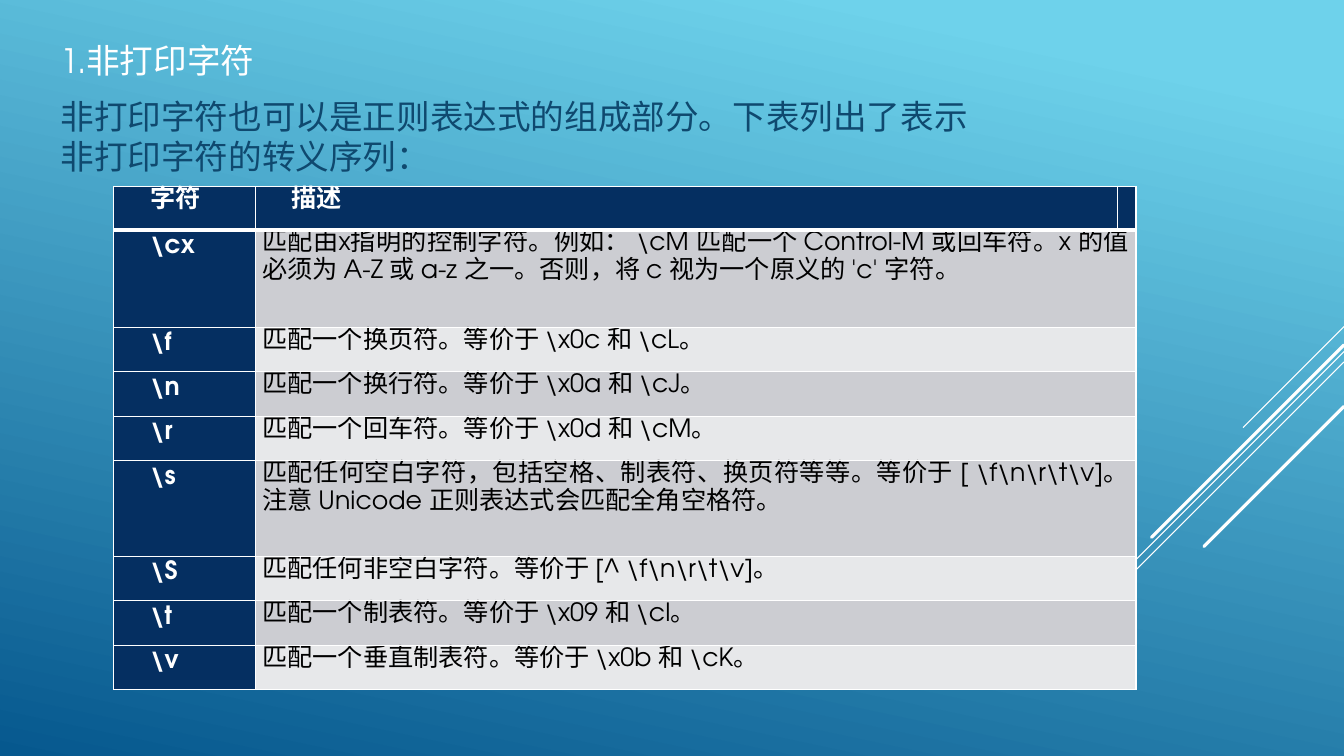
from lxml import etree
from pptx import Presentation
from pptx.dml.color import RGBColor
from pptx.enum.lang import MSO_LANGUAGE_ID
from pptx.enum.shapes import MSO_CONNECTOR
from pptx.enum.text import MSO_ANCHOR, MSO_AUTO_SIZE, PP_ALIGN
from pptx.oxml.ns import qn
from pptx.util import Cm, Pt

STRAIGHT = MSO_CONNECTOR.STRAIGHT
CHINESE = MSO_LANGUAGE_ID.SIMPLIFIED_CHINESE
TOP = MSO_ANCHOR.TOP
NO_AUTOFIT = MSO_AUTO_SIZE.NONE
LEFT, JUSTIFY = PP_ALIGN.LEFT, PP_ALIGN.JUSTIFY

FONT = "TeX Gyre Adventor"
COLORS = {
    "sky": "6ED2EB",
    "deep": "06588E",
    "white": "FFFFFF",
    "black": "000000",
    "intro": "0F496F",
    "navy": "052F61",
    "dark_band": "CCCDD2",
    "light_band": "E7E8EA",
}
SLIDE_WIDTH, SLIDE_HEIGHT = 33.87, 19.05
HEADING = "1.非打印字符"
INTRO = "非打印字符也可以是正则表达式的组成部分。下表列出了表示非打印字符的转义序列："
STRIPES = [
    (8.23, 2.54, 0.75),
    (8.86, 8.28, 0.75),
    (9.12, 5.27, 0.75),
    (8.69, 4.85, 2.25),
    (10.24, 3.53, 2.25),
]
COLUMN_WIDTHS = [3.56, 21.74, 0.46]
HEADER_HEIGHT = 1.09
ESCAPES = [
    (r"\cx", r"匹配由x指明的控制字符。例如： \cM 匹配一个 Control-M 或回车符。x 的值必须为 A-Z 或 a-z 之一。否则，将 c 视为一个原义的 'c' 字符。", 2.46),
    (r"\f", r"匹配一个换页符。等价于 \x0c 和 \cL。", 1.12),
    (r"\n", r"匹配一个换行符。等价于 \x0a 和 \cJ。", 1.12),
    (r"\r", r"匹配一个回车符。等价于 \x0d 和 \cM。", 1.12),
    (r"\s", r"匹配任何空白字符，包括空格、制表符、换页符等等。等价于 [ \f\n\r\t\v]。注意 Unicode 正则表达式会匹配全角空格符。", 2.41),
    (r"\S", r"匹配任何非空白字符。等价于 [^ \f\n\r\t\v]。", 1.12),
    (r"\t", r"匹配一个制表符。等价于 \x09 和 \cI。", 1.12),
    (r"\v", r"匹配一个垂直制表符。等价于 \x0b 和 \cK。", 1.12),
]


def rgb(name):
    return RGBColor.from_string(COLORS[name])


def write(paragraph, text, *, size, color, bold=False, align=LEFT, indent=0,
          line=None, before=0, after=0):
    paragraph.alignment = align
    if line:
        paragraph.line_spacing = Pt(line)
    paragraph.space_before = Pt(before)
    paragraph.space_after = Pt(after)
    properties = paragraph._p.get_or_add_pPr()
    properties.set("marL", "0")
    properties.set("indent", str(Cm(indent)))
    etree.SubElement(properties, qn("a:buNone"))
    run = paragraph.add_run()
    run.text = text
    run.font.name = FONT
    run.font.size = Pt(size)
    run.font.bold = bold
    run.font.color.rgb = rgb(color)
    run.font.language_id = CHINESE


class SlideBuilder:
    def __init__(self, presentation):
        self.slide = presentation.slides.add_slide(presentation.slide_layouts[1])
        title = self.slide.shapes.title
        title.element.getparent().remove(title.element)

    def background(self, start, end, angle):
        fill = self.slide.background.fill
        fill.gradient()
        fill.gradient_angle = 360 - angle
        for stop, position, color in zip(fill.gradient_stops, (0.1, 1), (start, end)):
            stop.position = position
            stop.color.rgb = rgb(color)

    def stripe(self, top, length, width):
        connector = self.slide.shapes.add_connector(
            STRAIGHT, Cm(SLIDE_WIDTH), Cm(top),
            Cm(SLIDE_WIDTH - length), Cm(top + length))
        connector.line.color.rgb = rgb("white")
        connector.line.width = Pt(width)
        connector.line._get_or_add_ln().set("cap", "rnd")
        etree.SubElement(connector._element.spPr, qn("a:effectLst"))

    def body(self, left, top, width, height, paragraphs):
        shape = self.slide.placeholders[1]
        shape.left, shape.top = Cm(left), Cm(top)
        shape.width, shape.height = Cm(width), Cm(height)
        frame = shape.text_frame
        frame.auto_size = NO_AUTOFIT
        frame.vertical_anchor = TOP
        for index, (text, color) in enumerate(paragraphs):
            paragraph = frame.add_paragraph() if index else frame.paragraphs[0]
            write(paragraph, text, size=24, color=color, before=4.8, after=6)

    def cell(self, cell, fill, top=1, bottom=1):
        cell.margin_left = cell.margin_right = Cm(0.18)
        cell.margin_top = cell.margin_bottom = 0
        properties = cell._tc.get_or_add_tcPr()
        for side, width in (("L", 1), ("R", 1), ("T", top), ("B", bottom)):
            border = etree.SubElement(properties, qn(f"a:ln{side}"), w=str(Pt(width)))
            solid = etree.SubElement(border, qn("a:solidFill"))
            etree.SubElement(solid, qn("a:srgbClr"), val=COLORS["white"])
        cell.fill.solid()
        cell.fill.fore_color.rgb = rgb(fill)

    def label(self, cell, text):
        write(cell.text_frame.paragraphs[0], text, size=18, color="white",
              bold=True, indent=0.74, line=20)

    def table(self, left, top, headers, escapes):
        heights = [HEADER_HEIGHT] + [height for _, _, height in escapes]
        table = self.slide.shapes.add_table(
            len(heights), len(COLUMN_WIDTHS), Cm(left), Cm(top),
            Cm(sum(COLUMN_WIDTHS)), Cm(sum(heights))).table
        table.horz_banding = False
        for column, width in zip(table.columns, COLUMN_WIDTHS):
            column.width = Cm(width)
        for row, height in zip(table.rows, heights):
            row.height = Cm(height)
        for cell in table.rows[0].cells:
            self.cell(cell, "navy", bottom=3)
        for index, header in enumerate(headers):
            self.label(table.cell(0, index), header)
        for row, (code, description, _) in enumerate(escapes, 1):
            band = "dark_band" if row % 2 else "light_band"
            code_cell, text_cell, last_cell = table.rows[row].cells
            text_cell.merge(last_cell)
            for cell, fill in ((code_cell, "navy"), (text_cell, band), (last_cell, band)):
                self.cell(cell, fill, top=3 if row == 1 else 1)
            self.label(code_cell, code)
            write(text_cell.text_frame.paragraphs[0], description, size=18,
                  color="black", align=JUSTIFY, line=20)


def main():
    presentation = Presentation()
    presentation.slide_width = Cm(SLIDE_WIDTH)
    presentation.slide_height = Cm(SLIDE_HEIGHT)
    builder = SlideBuilder(presentation)
    builder.background("sky", "deep", 102)
    for top, length, width in STRIPES:
        builder.stripe(top, length, width)
    builder.body(1.27, 0.89, 23.77, 15.67, [(HEADING, "white"), (INTRO, "intro")])
    builder.table(2.87, 4.7, ["字符", "描述"], ESCAPES)
    presentation.save("out.pptx")


if __name__ == "__main__":
    main()
